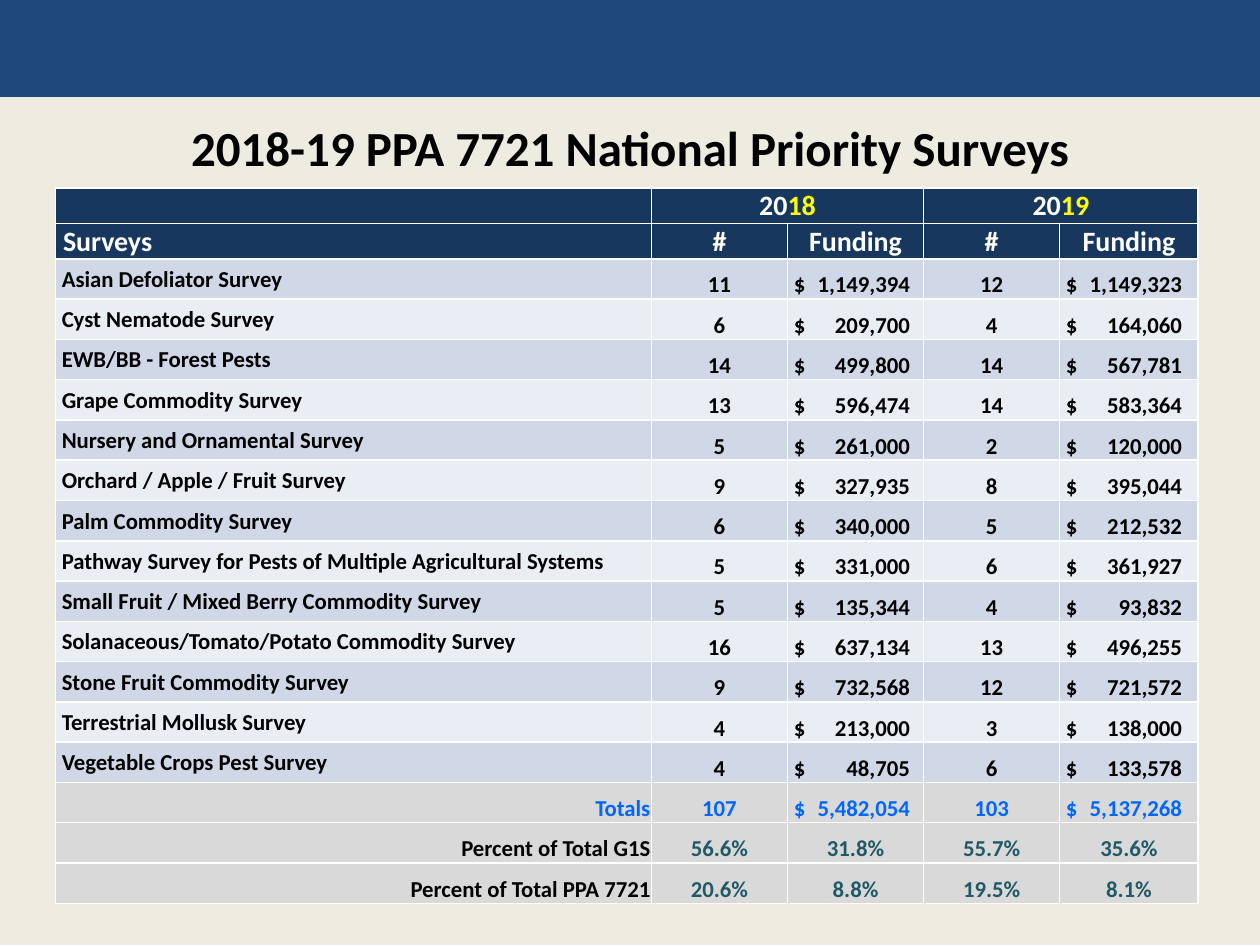
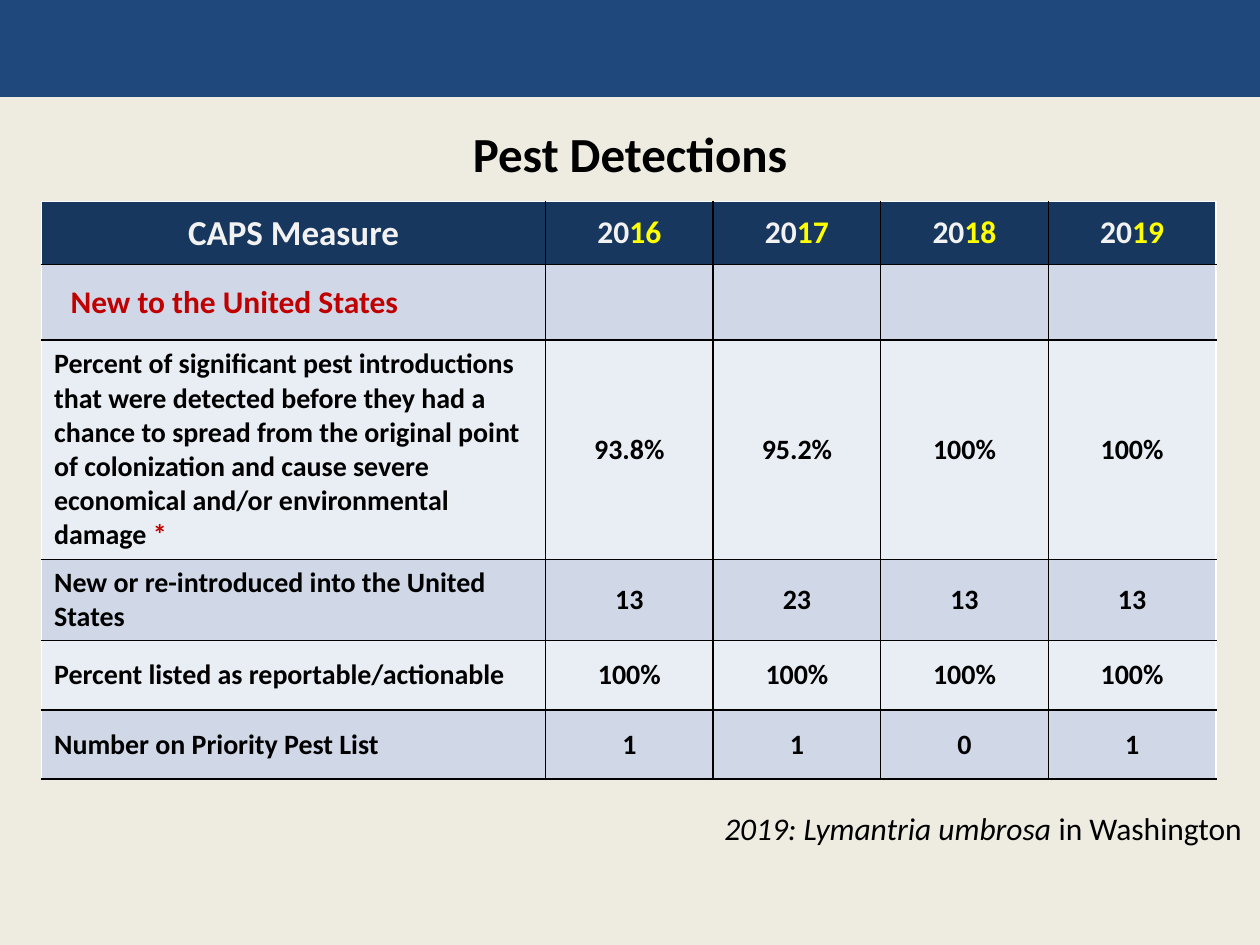
import pptx
import pptx.util
import pptx.oxml
import pptx.oxml.ns
import pptx.dml.color
import pptx.enum.shapes
import pptx.enum.text
from lxml import etree

Inches, Pt = pptx.util.Inches, pptx.util.Pt
ALIGN, ANCHOR = pptx.enum.text.PP_ALIGN, pptx.enum.text.MSO_ANCHOR
FONT = "Calibri"
COLORS = {
    "paper": "EEECE1", "band": "1F497D", "header": "17375E",
    "odd": "D0D8E8", "even": "E9EDF4", "summary": "D9D9D9",
    "black": "000000", "white": "FFFFFF", "offwhite": "F2F2F2",
    "yellow": "FFFF00", "blue": "0066FF", "teal": "215967", "red": "C00000",
}

SURVEYS = [
    ("Asian Defoliator Survey", "11", "1,149,394", "12", "1,149,323"),
    ("Cyst Nematode Survey", "6", "209,700", "4", "164,060"),
    ("EWB/BB - Forest Pests", "14", "499,800", "14", "567,781"),
    ("Grape Commodity Survey", "13", "596,474", "14", "583,364"),
    ("Nursery and Ornamental Survey", "5", "261,000", "2", "120,000"),
    ("Orchard / Apple / Fruit Survey", "9", "327,935", "8", "395,044"),
    ("Palm Commodity Survey", "6", "340,000", "5", "212,532"),
    ("Pathway Survey for Pests of Multiple Agricultural Systems",
     "5", "331,000", "6", "361,927"),
    ("Small Fruit / Mixed Berry Commodity Survey", "5", "135,344", "4", "93,832"),
    ("Solanaceous/Tomato/Potato Commodity Survey", "16", "637,134", "13", "496,255"),
    ("Stone Fruit Commodity Survey", "9", "732,568", "12", "721,572"),
    ("Terrestrial Mollusk Survey", "4", "213,000", "3", "138,000"),
    ("Vegetable Crops Pest Survey", "4", "48,705", "6", "133,578"),
]
TOTALS = ("Totals", "107", "5,482,054", "103", "5,137,268")
PERCENTS = [
    ("Percent of Total G1S", "56.6%", "31.8%", "55.7%", "35.6%"),
    ("Percent of Total PPA 7721", "20.6%", "8.8%", "19.5%", "8.1%"),
]
MEASURES = [
    ("Percent of significant pest introductions that were detected before they had "
     "a chance to spread from the original point of colonization and cause severe "
     "economical and/or environmental damage ", "93.8%", "95.2%", "100%", "100%"),
    ("New or re-introduced into the United States", "13", "23", "13", "13"),
    ("Percent listed as reportable/actionable", "100%", "100%", "100%", "100%"),
    ("Number on Priority Pest List", "1", "1", "0", "1"),
]


def rgb(name):
    return pptx.dml.color.RGBColor.from_string(COLORS[name])


def sub(parent, tag, **attrs):
    return etree.SubElement(parent, pptx.oxml.ns.qn(tag), attrs)


def paint(sp, color):
    sp.fill.solid()
    sp.fill.fore_color.rgb = rgb(color)


def write(p, runs, size, align=ALIGN.LEFT, bold=True):
    """Fill a paragraph with (text, colour) runs."""
    p.alignment = align
    p.font.name, p.font.size, p.font.bold = FONT, Pt(size), bold
    for text, color in runs:
        r = p.add_run()
        r.text = text
        r.font.color.rgb = rgb(color)
    if not runs:
        p._p.get_or_add_endParaRPr().set("sz", str(size * 100))


def year(yy, color):
    return [("20", color), (yy, "yellow")]


# Shared parts
def style_master(prs, slide):
    master = prs.slide_master
    paint(master.background, "paper")
    band = slide.shapes.add_shape(pptx.enum.shapes.MSO_SHAPE.RECTANGLE,
                                  0, 0, prs.slide_width, Inches(0.77))
    band.shadow.inherit = False
    paint(band, "band")
    band.line.fill.background()
    master.shapes._spTree.insert(2, band._element)


def add_title(slide, text, top):
    sp = slide.shapes.title
    sp.left, sp.top, sp.width, sp.height = map(Inches, (0.5, top, 9, 0.78))
    tf = sp.text_frame
    tf.vertical_anchor = ANCHOR.MIDDLE
    p = tf.paragraphs[0]
    write(p, [(text, "black")], 28, ALIGN.CENTER)
    # Soft text shadow
    effects = sub(p.runs[0]._r.get_or_add_rPr(), "a:effectLst")
    shadow = sub(effects, "a:outerShdw", blurRad="38100", dist="38100",
                 dir="2700000", algn="tl")
    black = sub(shadow, "a:srgbClr", val=COLORS["black"])
    sub(black, "a:alpha", val="43000")


def add_grid(slide, left, top, widths, heights):
    frame = slide.shapes.add_table(len(heights), len(widths), Inches(left), Inches(top),
                                   Inches(sum(widths)), Inches(sum(heights)))
    table = frame.table
    table.first_row = table.horz_banding = False
    for column, width in zip(table.columns, widths):
        column.width = Inches(width)
    for row, height in zip(table.rows, heights):
        row.height = Inches(height)
    return table


def set_cell(cell, runs, size, fill, align=ALIGN.CENTER, anchor=ANCHOR.MIDDLE,
             borders=("white",) * 4):
    """Borders are the colours of the left, right, top and bottom edges."""
    paint(cell, fill)
    cell.vertical_anchor = anchor
    tcPr = cell._tc.get_or_add_tcPr()
    for i, (side, color) in enumerate(zip("LRTB", borders)):
        ln = sub(tcPr, f"a:ln{side}", w="12700")
        sub(sub(ln, "a:solidFill"), "a:srgbClr", val=COLORS[color])
        tcPr.insert(i, ln)
    write(cell.text_frame.paragraphs[0], runs, size, align)


# Slide 1: surveys
def survey_cell(cell, text, color, size, fill, indent=0.01, **kw):
    cell.margin_left, cell.margin_right = Inches(indent), Inches(0.01)
    cell.margin_top, cell.margin_bottom = Inches(0.01), 0
    runs = text if isinstance(text, list) else [(text, color)]
    set_cell(cell, runs, size, fill, **kw)


def money_cell(cell, amount, color, fill):
    # Dollar sign at the left, amount against a right tab
    pPr = cell.text_frame.paragraphs[0]._p.get_or_add_pPr()
    sub(sub(pPr, "a:tabLst"), "a:tab", pos=str(Inches(0.92)), algn="r")
    survey_cell(cell, f"$\t{amount}", color, 13, fill, indent=0.05,
                align=ALIGN.LEFT, anchor=ANCHOR.BOTTOM)


def survey_row(table, i, values, fill, label_color, color, money, label):
    survey_cell(table.cell(i, 0), values[0], label_color, 13, fill, **label)
    for j, value in enumerate(values[1:], 1):
        if money and j % 2 == 0:
            money_cell(table.cell(i, j), value, color, fill)
        else:
            survey_cell(table.cell(i, j), value, color, 13, fill, anchor=ANCHOR.BOTTOM)


def survey_table(slide, left, top):
    body_rows = len(SURVEYS) + 1 + len(PERCENTS)
    table = add_grid(slide, left, top, [4.73, 1.08, 1.08, 1.08, 1.1],
                     [0.28] * 2 + [0.32] * body_rows)
    # Two header rows
    for j, runs in enumerate([[], year("18", "white"), [], year("19", "white"), []]):
        survey_cell(table.cell(0, j), runs, None, 16, "header")
    for j in (1, 3):
        table.cell(0, j).merge(table.cell(0, j + 1))
    survey_cell(table.cell(1, 0), "Surveys", "white", 16, "header", indent=0.06,
                align=ALIGN.LEFT)
    for j, text in enumerate(["#", "Funding"] * 2, 1):
        survey_cell(table.cell(1, j), text, "white", 16, "header")
    # Survey rows, then the summary
    name = dict(indent=0.05, align=ALIGN.LEFT)
    for i, values in enumerate(SURVEYS):
        survey_row(table, i + 2, values, ("odd", "even")[i % 2], "black", "black", True, name)
    label = dict(align=ALIGN.RIGHT, anchor=ANCHOR.BOTTOM)
    first = len(SURVEYS) + 2
    survey_row(table, first, TOTALS, "summary", "blue", "blue", True, label)
    for i, values in enumerate(PERCENTS, first + 1):
        survey_row(table, i, values, "summary", "black", "teal", False, label)


# Slide 2: detections
def detection_table(slide, left, top):
    table = add_grid(slide, left, top, [4] + [1.33] * 4,
                     [0.5, 0.6, 1.74, 0.64, 0.55, 0.55])
    header = [[("CAPS Measure", "offwhite")]]
    header += [year(yy, "offwhite") for yy in ("16", "17", "18", "19")]
    rows = [header, [[("New to the United States", "red")], [], [], [], []]]
    rows += [[[(text, "black")] for text in values] for values in MEASURES]
    rows[2][0].append(("*", "red"))
    for i, row in enumerate(rows):
        fill = "header" if i == 0 else ("even", "odd")[i % 2]
        for j, runs in enumerate(row):
            size = (20 if j == 0 else 18) if i == 0 else 16
            if i == 1:
                size = 18
            borders = ("white" if j == 0 else "black", "white" if j == 4 else "black",
                       "white" if i == 0 else "black", "black")
            align = ALIGN.LEFT if i and j == 0 else ALIGN.CENTER
            set_cell(table.cell(i, j), runs, size, fill, align, borders=borders)
    table.cell(1, 0).margin_left = Inches(0.23)


def detection_note(slide, left, top):
    sp = slide.shapes.add_textbox(Inches(left), Inches(top), Inches(4.35), Inches(0.4))
    tf = sp.text_frame
    tf.word_wrap = False
    tf.auto_size = pptx.enum.text.MSO_AUTO_SIZE.SHAPE_TO_FIT_TEXT
    p = tf.paragraphs[0]
    write(p, [("2019: Lymantria umbrosa", "black"), (" in Washington", "black")], 18,
          bold=False)
    p.runs[0].font.italic = True


def main():
    prs = pptx.Presentation()
    prs.slide_width, prs.slide_height = Inches(10), Inches(7.5)
    title_only = prs.slide_layouts[5]

    s = prs.slides.add_slide(title_only)
    style_master(prs, s)
    add_title(s, "2018-19 PPA 7721 National Priority Surveys", 0.78)
    survey_table(s, 0.44, 1.49)

    s = prs.slides.add_slide(title_only)
    add_title(s, "Pest Detections", 0.82)
    detection_table(s, 0.33, 1.6)
    detection_note(s, 5.65, 6.37)

    prs.save("out.pptx")


if __name__ == "__main__":
    main()
